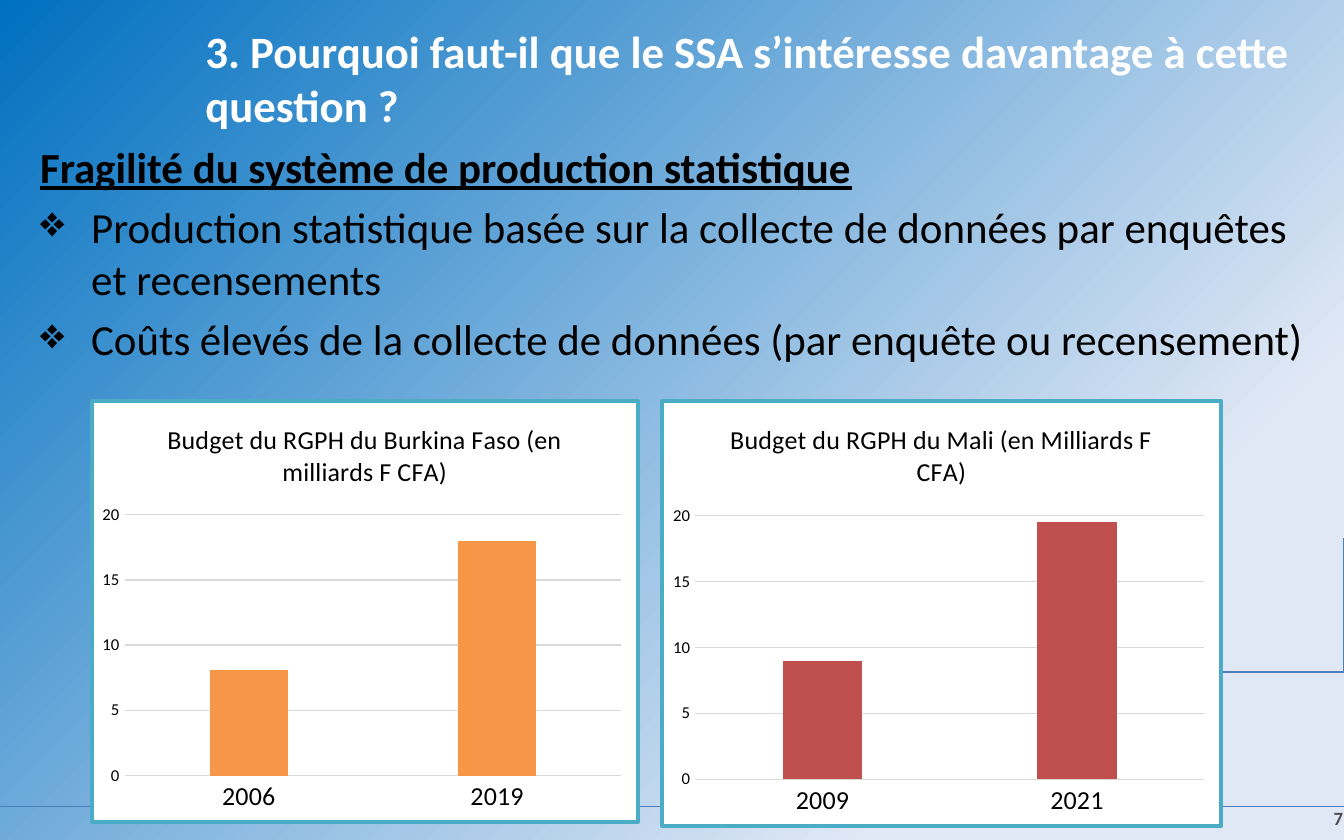
from lxml import etree
from pptx import Presentation
from pptx.chart.data import CategoryChartData
from pptx.dml.color import RGBColor
from pptx.enum.chart import XL_CHART_TYPE, XL_TICK_MARK
from pptx.enum.text import MSO_ANCHOR, PP_ALIGN
from pptx.oxml import parse_xml
from pptx.oxml.ns import nsdecls, qn
from pptx.util import Inches, Pt

COLUMN = XL_CHART_TYPE.COLUMN_CLUSTERED
NO_TICK = XL_TICK_MARK.NONE
MIDDLE, TOP = MSO_ANCHOR.MIDDLE, MSO_ANCHOR.TOP
LEFT, RIGHT = PP_ALIGN.LEFT, PP_ALIGN.RIGHT
WIDE, HIGH = 10, 6.25
FACE = "Calibri"
BLACK, WHITE, GRID = "000000", "FFFFFF", "D9D9D9"
BLUE, PALE, WAVE, TEAL = "0070C0", "E1E8F5", "4B7EBC", "4BACC6"


def rgb(code):
    return RGBColor.from_string(code)


def style(font, size, color=BLACK, bold=False):
    font.name, font.size, font.bold = FACE, Pt(size), bold
    font.color.rgb = rgb(color)


def backdrop(slide):
    """Round gradient, light at the lower right corner."""
    fill = slide.background.fill
    fill.gradient()
    for stop, (at, code) in zip(fill.gradient_stops, [(0.22, PALE), (1, BLUE)]):
        stop.position, stop.color.rgb = at, rgb(code)
    grad = slide.element.find(".//" + qn("a:gradFill"))
    grad.replace(grad.find(qn("a:lin")), parse_xml(
        f'<a:path {nsdecls("a")} path="circle">'
        '<a:fillToRect l="100000" t="100000"/></a:path>'))


def bezier(a, b, c, d, t):
    s = 1 - t
    return tuple(s**3 * p + 3 * s * s * t * q + 3 * s * t * t * r + t**3 * e
                 for p, q, r, e in zip(a, b, c, d))


def wave(slide, start, *arcs, steps=24):
    """Thin open curve; each arc is two handles and an end."""
    points, pen = [], start
    for arc in arcs:
        points += [bezier(pen, *arc, i / steps) for i in range(1, steps + 1)]
        pen = arc[-1]
    path = slide.shapes.build_freeform(*start, scale=Inches(1))
    path.add_line_segments(points, close=False)
    shape = path.convert_to_shape()
    shape.shadow.inherit = False
    shape.fill.background()
    shape.line.color.rgb, shape.line.width = rgb(WAVE), Pt(0.75)


def words(slide, box, lines, size, color, bold=False, anchor=MIDDLE, align=LEFT):
    frame = slide.shapes.add_textbox(*map(Inches, box)).text_frame
    frame.word_wrap, frame.vertical_anchor = True, anchor
    frame.text = "\n".join(lines)
    for para in frame.paragraphs:
        para.alignment = align
        for run in para.runs:
            style(run.font, size, color, bold)
    return frame.paragraphs


def body(slide, box, head, points):
    size = 23
    first, *rest = words(slide, box, [head, *points], size, BLACK, anchor=TOP)
    first.runs[0].font.bold = first.runs[0].font.underline = True
    for para in rest:
        para.space_before = Pt(size * 0.2)
        props = para._p.get_or_add_pPr()
        props.set("marL", str(Inches(0.38)))
        props.set("indent", str(-Inches(0.38)))
        etree.SubElement(props, qn("a:buChar")).set("char", "❖")


def frame_chart(chart):
    """White area with a square teal border."""
    root = chart.element
    if root.find(qn("c:roundedCorners")) is None:
        root.find(qn("c:date1904")).addnext(
            parse_xml(f'<c:roundedCorners {nsdecls("c")} val="0"/>'))
    root.find(qn("c:chart")).addnext(parse_xml(
        f'<c:spPr {nsdecls("c", "a")}><a:solidFill><a:srgbClr val="{WHITE}"/>'
        f'</a:solidFill><a:ln w="{Pt(2)}"><a:solidFill><a:srgbClr val="{TEAL}"/>'
        '</a:solidFill></a:ln></c:spPr>'))


def place_plot(chart, x, y, w, h):
    """Inner plot area as shares of the chart."""
    area = chart.element.find(".//" + qn("c:plotArea"))
    old = area.find(qn("c:layout"))
    if old is not None:
        area.remove(old)
    area.insert(0, parse_xml(
        f'<c:layout {nsdecls("c")}><c:manualLayout><c:layoutTarget val="inner"/>'
        '<c:xMode val="edge"/><c:yMode val="edge"/>'
        f'<c:x val="{x}"/><c:y val="{y}"/><c:w val="{w}"/><c:h val="{h}"/>'
        '</c:manualLayout></c:layout>'))


def budget(slide, box, title, years, sums, color):
    data = CategoryChartData()
    data.categories = years
    data.add_series("Budget", sums)
    chart = slide.shapes.add_chart(COLUMN, *map(Inches, box), data).chart
    style(chart.font, 10)
    frame_chart(chart)
    place_plot(chart, 0.06, 0.27, 0.91, 0.62)
    chart.has_legend = False
    # Title
    chart.has_title = True
    chart.chart_title.include_in_layout = False
    text = chart.chart_title.text_frame
    text.text = title
    style(text.paragraphs[0].runs[0].font, 14)
    # Columns
    plot = chart.plots[0]
    plot.vary_by_categories, plot.gap_width, plot.overlap = False, 219, -27
    fill = plot.series[0].format.fill
    fill.solid()
    fill.fore_color.rgb = rgb(color)
    # Axes
    cat, val = chart.category_axis, chart.value_axis
    for axis, size in ((cat, 14), (val, 9)):
        axis.major_tick_mark = axis.minor_tick_mark = NO_TICK
        style(axis.tick_labels.font, size)
    val.minimum_scale, val.maximum_scale, val.major_unit = 0, 20, 5
    val.format.line.fill.background()
    for line in (cat.format.line, val.major_gridlines.format.line):
        line.color.rgb, line.width = rgb(GRID), Pt(0.75)


def main():
    deck = Presentation()
    deck.slide_width, deck.slide_height = Inches(WIDE), Inches(HIGH)
    slide = deck.slides.add_slide(deck.slide_layouts[6])
    backdrop(slide)
    wave(slide, (0.24, 5.69), [(2.61, 6.02), (4.98, 6.35), (6.64, 6.13)],
         [(8.31, 5.92), (9.28, 5.15), (10.25, 4.39)])
    wave(slide, (0.25, 5.66), [(2.01, 6.04), (3.76, 6.41), (5.43, 6.46)],
         [(7.1, 6.51), (8.69, 6.24), (10.28, 5.97)])
    words(slide, (1.43, 0.08, 8.35, 1),
          ["3. Pourquoi faut-il que le SSA s’intéresse davantage à cette question ?"],
          24, WHITE, bold=True)
    body(slide, (0.2, 1, 9.8, 4.58), "Fragilité du système de production statistique",
         ["Production statistique basée sur la collecte de données par enquêtes"
          " et recensements",
          "Coûts élevés de la collecte de données (par enquête ou recensement)"])
    words(slide, (9.1, 5.92, 0.99, 0.33), ["7"], 10, "4D4D4D", bold=True, align=RIGHT)
    budget(slide, (0.67, 2.97, 4.09, 3.16),
           "Budget du RGPH du Burkina Faso (en milliards F CFA)",
           ["2006", "2019"], [8.1, 18], "F79646")
    budget(slide, (4.91, 2.97, 4.19, 3.19),
           "Budget du RGPH du Mali (en Milliards F CFA)",
           ["2009", "2021"], [9, 19.5], "C0504D")
    deck.save("out.pptx")


if __name__ == "__main__":
    main()
